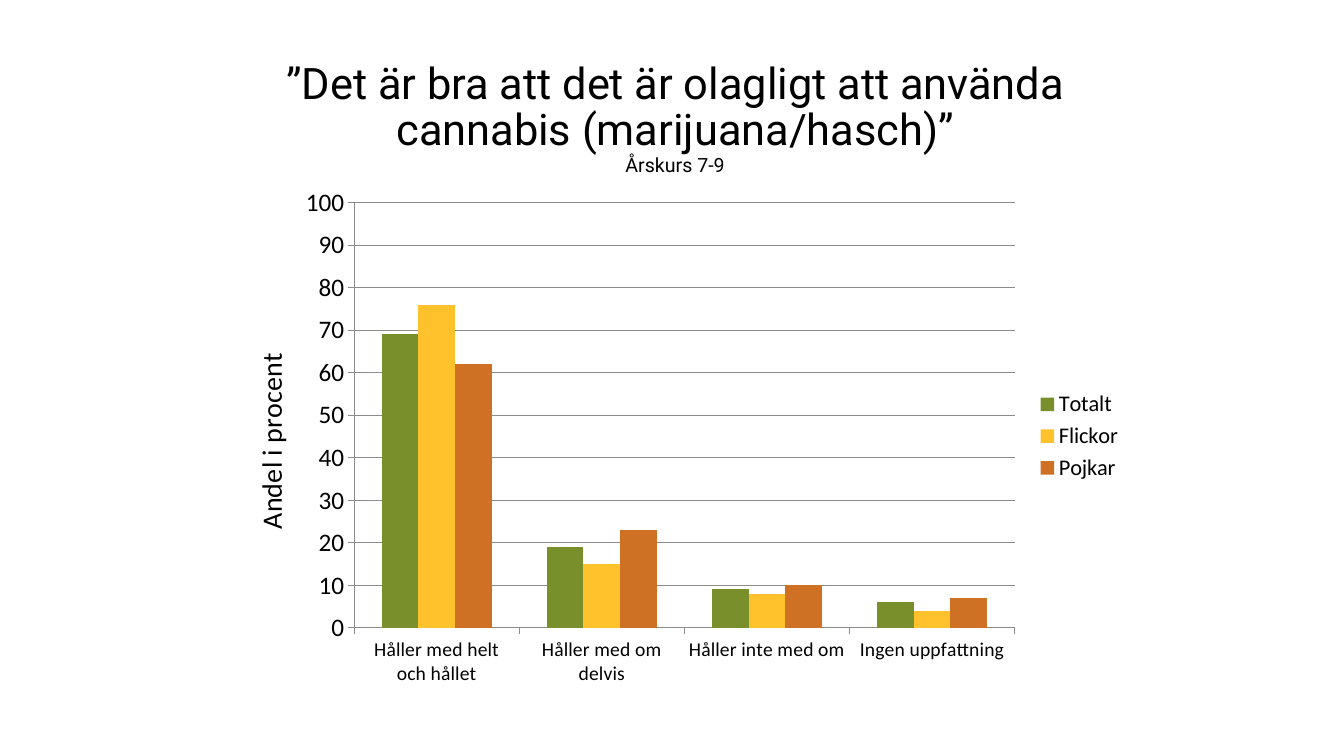
from lxml import etree
from pptx import Presentation
from pptx.chart.data import CategoryChartData
from pptx.dml.color import RGBColor
from pptx.enum.chart import XL_CHART_TYPE as ChartType, XL_LEGEND_POSITION as LegendPosition
from pptx.enum.chart import XL_TICK_MARK as TickMark
from pptx.enum.text import MSO_ANCHOR as Anchor, PP_ALIGN as Align
from pptx.oxml.ns import qn
from pptx.util import Cm, Pt

BLACK, GREY = "000000", "8C8C8C"
CATEGORIES = ["Håller med helt och hållet", "Håller med om delvis",
              "Håller inte med om", "Ingen uppfattning"]
SERIES = [("Totalt", "798F2C", (69, 19, 9, 6)),
          ("Flickor", "FFC12C", (76, 15, 8, 4)),
          ("Pojkar", "CE7125", (62, 23, 10, 7))]


def color(value):
    return RGBColor.from_string(value)


def set_font(font, name, size, bold=False):
    font.name, font.size, font.bold = name, Pt(size), bold
    font.color.rgb = color(BLACK)


def set_line(line):
    line.color.rgb = color(GREY)
    line.width = Pt(0.5)


def set_layout(parent, index, **settings):
    """Place a chart part by fractions of the chart's size."""
    for old in parent.findall(qn("c:layout")):
        parent.remove(old)
    layout = etree.Element(qn("c:layout"))
    manual = etree.SubElement(layout, qn("c:manualLayout"))
    for name, value in settings.items():
        etree.SubElement(manual, qn("c:" + name)).set("val", str(value))
    parent.insert(index, layout)


def add_title(slide, left, top, width, height):
    box = slide.shapes.add_textbox(Cm(left), Cm(top), Cm(width), Cm(height))
    frame = box.text_frame
    frame.word_wrap = True
    frame.vertical_anchor = Anchor.BOTTOM
    frame.margin_left = frame.margin_right = frame.margin_top = frame.margin_bottom = 0
    paragraph = frame.paragraphs[0]
    paragraph.alignment = Align.CENTER
    paragraph.line_spacing = 0.9
    question = paragraph.add_run()
    question.text = "”Det är bra att det är olagligt att använda cannabis (marijuana/hasch)”"
    set_font(question.font, "Roboto", 31)
    paragraph.add_line_break()
    grades = paragraph.add_run()
    grades.text = "Årskurs 7-9"
    set_font(grades.font, "Roboto", 14)


def add_answer_chart(slide, left, top, width, height):
    data = CategoryChartData(number_format="General")
    data.categories = CATEGORIES
    for name, _, values in SERIES:
        data.add_series(name, values)
    chart = slide.shapes.add_chart(ChartType.COLUMN_CLUSTERED, Cm(left), Cm(top),
                                   Cm(width), Cm(height), data).chart
    set_font(chart.font, "Roboto", 18)
    chart.has_title = False

    # Columns
    plot = chart.plots[0]
    plot.gap_width, plot.overlap = 150, 0
    plot.vary_by_categories = False
    for series, (_, fill, _) in zip(plot.series, SERIES):
        series.format.fill.solid()
        series.format.fill.fore_color.rgb = color(fill)

    # Axes
    for axis, size in ((chart.category_axis, 14), (chart.value_axis, 18)):
        set_font(axis.tick_labels.font, "Calibri", size)
        set_line(axis.format.line)
        axis.major_tick_mark = TickMark.OUTSIDE
        axis.minor_tick_mark = TickMark.NONE
    percent = chart.value_axis
    percent.minimum_scale, percent.maximum_scale, percent.major_unit = 0, 100, 10
    percent.has_major_gridlines = True
    set_line(percent.major_gridlines.format.line)
    paragraph = percent.axis_title.text_frame.paragraphs[0]
    paragraph.text = "Andel i procent"
    set_font(paragraph.font, "Calibri", 20)

    # Legend
    chart.has_legend = True
    chart.legend.position = LegendPosition.RIGHT
    chart.legend.include_in_layout = False
    set_font(chart.legend.font, "Calibri", 16)

    # Places of the plot area and the axis title
    plot_area = chart.element.find(".//" + qn("c:plotArea"))
    set_layout(plot_area, 0, layoutTarget="inner", xMode="edge", yMode="edge",
               x=0.148, y=0.05, w=0.722, h=0.819)
    axis_title = plot_area.find(qn("c:valAx")).find(qn("c:title"))
    set_layout(axis_title, 1, xMode="edge", yMode="edge", x=0.03, y=0.33)


def main():
    presentation = Presentation()
    presentation.slide_width, presentation.slide_height = Cm(33.87), Cm(19.05)
    slide = presentation.slides.add_slide(presentation.slide_layouts[6])
    add_title(slide, 4.9, 1.27, 24.23, 3.18)
    add_answer_chart(slide, 5.51, 4.45, 23.06, 13.08)
    presentation.save("out.pptx")


if __name__ == "__main__":
    main()
